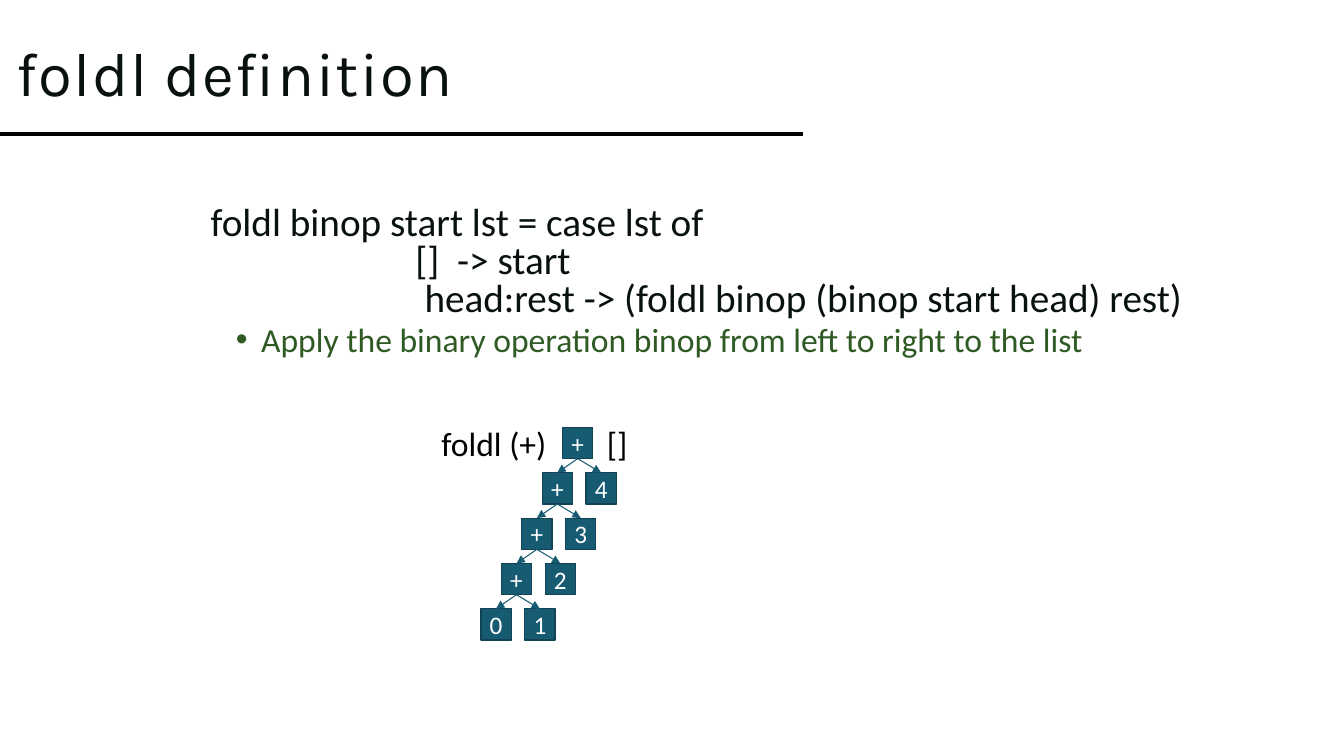
from lxml.etree import SubElement
from pptx import Presentation
from pptx.dml.color import RGBColor
from pptx.enum.shapes import MSO_CONNECTOR as Connector, MSO_SHAPE as Shape
from pptx.enum.text import MSO_ANCHOR as Anchor, MSO_AUTO_SIZE as AutoSize, PP_ALIGN as Align
from pptx.oxml.ns import qn
from pptx.util import Inches, Pt

BLACK = RGBColor(0x00, 0x00, 0x00)
INK = RGBColor(0x08, 0x11, 0x0B)
GREEN = RGBColor(0x2F, 0x5A, 0x24)
TEAL = RGBColor(0x17, 0x5B, 0x73)
DARK_TEAL = RGBColor(0x11, 0x43, 0x55)
WHITE = RGBColor(0xFF, 0xFF, 0xFF)

BOTTOM, TOP = 2, 0


def apply(target, values):
    for name, value in values.items():
        setattr(target, name, value)


class SlideBuilder:
    body_font = "Calibri"
    title_font = "Karla"

    def __init__(self, page):
        self.page = page

    def add_text(self, para, text, size, color, font=None, **layout):
        apply(para, layout)
        span = para.add_run()
        span.text = text
        apply(span.font, {"name": font or self.body_font, "size": Pt(size)})
        span.font.color.rgb = color
        return span

    def place(self, shape, left, top, width, height):
        apply(shape, {"left": Inches(left), "top": Inches(top),
                      "width": Inches(width), "height": Inches(height)})

    def title(self, text, *area):
        shape = self.page.shapes.title
        self.place(shape, *area)
        apply(shape.text_frame, {"vertical_anchor": Anchor.MIDDLE, "auto_size": AutoSize.NONE})
        span = self.add_text(shape.text_frame.paragraphs[0], text, 44, INK, self.title_font,
                             alignment=Align.LEFT, line_spacing=0.9)
        span.font._element.set("spc", "100")

    def body(self, items, *area):
        """Each item is text, size, colour, space before, indent, level, bullet."""
        shape = self.page.placeholders[1]
        self.place(shape, *area)
        frame = shape.text_frame
        frame.auto_size = AutoSize.NONE
        for index, (text, size, color, before, indent, level, bullet) in enumerate(items):
            para = frame.add_paragraph() if index else frame.paragraphs[0]
            self.add_text(para, text, size, color, level=level, line_spacing=0.8,
                          space_before=Pt(before), space_after=Pt(0), alignment=Align.LEFT)
            props = para._p.get_or_add_pPr()
            props.set("marL", str(Inches(indent)))
            props.set("indent", str(Inches(-0.25 if bullet else 0)))
            if bullet:
                SubElement(props, qn("a:buFont"), typeface="Arial")
                SubElement(props, qn("a:buChar"), char=bullet)
            else:
                SubElement(props, qn("a:buNone"))

    def node(self, text, left, top):
        box = self.page.shapes.add_shape(Shape.RECTANGLE, Inches(left), Inches(top),
                                         Inches(0.3), Inches(0.31))
        box.shadow.inherit = False
        box.fill.solid()
        box.fill.fore_color.rgb = TEAL
        box.line.color.rgb = DARK_TEAL
        box.line.width = Pt(0.85)
        apply(box.text_frame, {"margin_left": 0, "margin_right": 0, "margin_top": 0,
                               "margin_bottom": 0, "vertical_anchor": Anchor.MIDDLE})
        self.add_text(box.text_frame.paragraphs[0], text, 18, WHITE, alignment=Align.CENTER)
        return box

    def line(self, start, end, color, width):
        link = self.page.shapes.add_connector(
            Connector.STRAIGHT, *(Inches(value) for value in start + end))
        link.line.color.rgb = color
        link.line.width = Pt(width)
        SubElement(link._element.spPr, qn("a:effectLst"))
        return link

    def arrow(self, parent, child):
        link = self.line((0, 0), (1, 1), TEAL, 0.75)
        link.begin_connect(parent, BOTTOM)
        link.end_connect(child, TOP)
        SubElement(link.line._get_or_add_ln(), qn("a:tailEnd"), type="triangle")

    def label(self, text, tab, left, top, width, height):
        box = self.page.shapes.add_textbox(Inches(left), Inches(top),
                                           Inches(width), Inches(height))
        apply(box.text_frame, {"word_wrap": False, "auto_size": AutoSize.SHAPE_TO_FIT_TEXT})
        para = box.text_frame.paragraphs[0]
        self.add_text(para, text, 24, BLACK)
        stops = SubElement(para._p.get_or_add_pPr(), qn("a:tabLst"))
        SubElement(stops, qn("a:tab"), pos=str(Inches(tab)), algn="l")


def main():
    deck = Presentation()
    apply(deck, {"slide_width": Inches(13.33), "slide_height": Inches(7.5)})
    builder = SlideBuilder(deck.slides.add_slide(deck.slide_layouts[1]))

    # Heading and its rule
    builder.line((0, 1.33), (7.96, 1.33), BLACK, 2.25)
    builder.title("foldl definition", 0.06, 0.03, 8.43, 1.45)

    # Definition and explanation
    builder.body([
        ("foldl binop start lst = case lst of", 28, INK, 10, 0.25, 0, None),
        ("[]  -> start", 28, INK, 0, 2.28, 0, None),
        ("head:rest -> (foldl binop (binop start head) rest)", 28, INK, 0, 2.37, 0, None),
        ("Apply the binary operation binop from left to right to the list",
         24, GREEN, 5, 0.75, 1, "•"),
    ], 1.74, 2, 10.68, 1.68)

    # Expression tree, leaning left one level at a time
    left, top = 5.58, 4.24
    parent = builder.node("+", left, top)
    for left_text, right_text in ("+4", "+3", "+2", "01"):
        left -= 0.2025
        top += 0.45
        left_child = builder.node(left_text, left, top)
        right_child = builder.node(right_text, left + 0.435, top)
        for child in (left_child, right_child):
            builder.arrow(parent, child)
        parent = left_child

    # Call around the root of the tree
    builder.label("foldl (+)\t[]", 1.64, 4.28, 4.15, 2.06, 0.5)

    deck.save("out.pptx")


if __name__ == "__main__":
    main()
